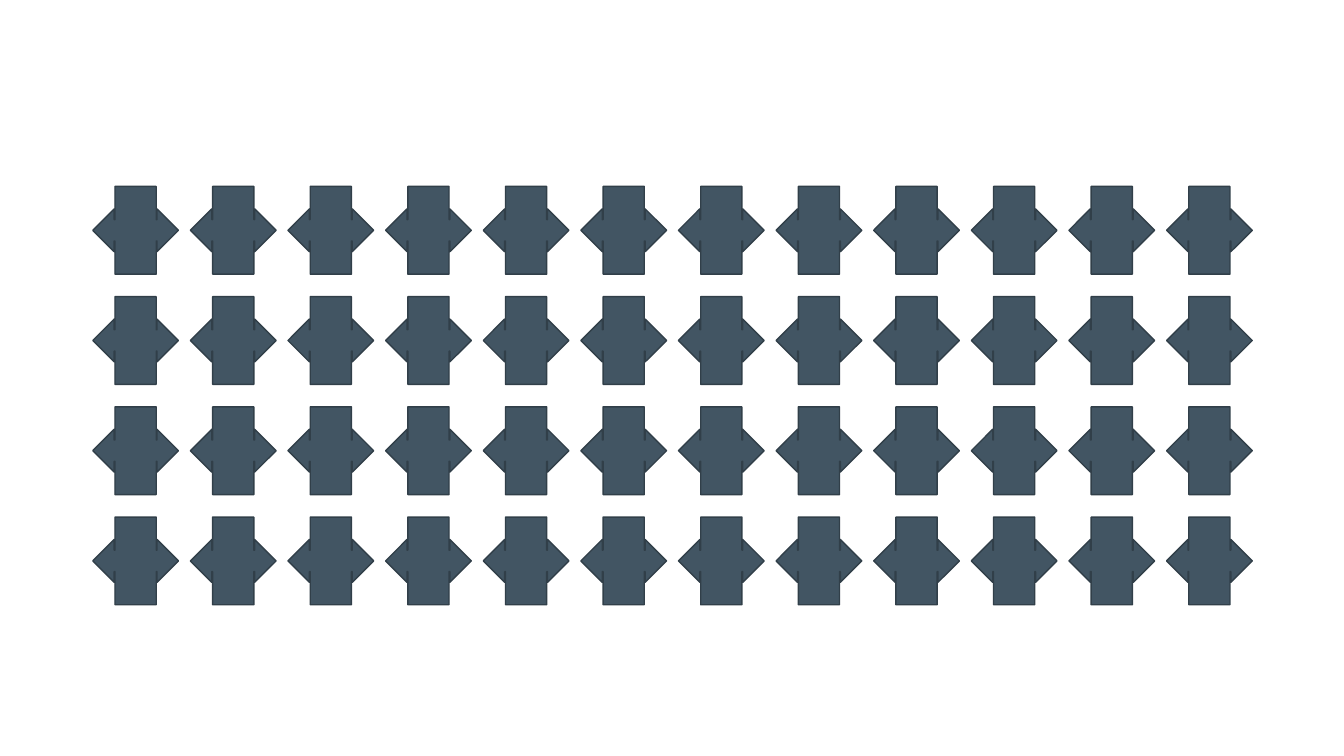
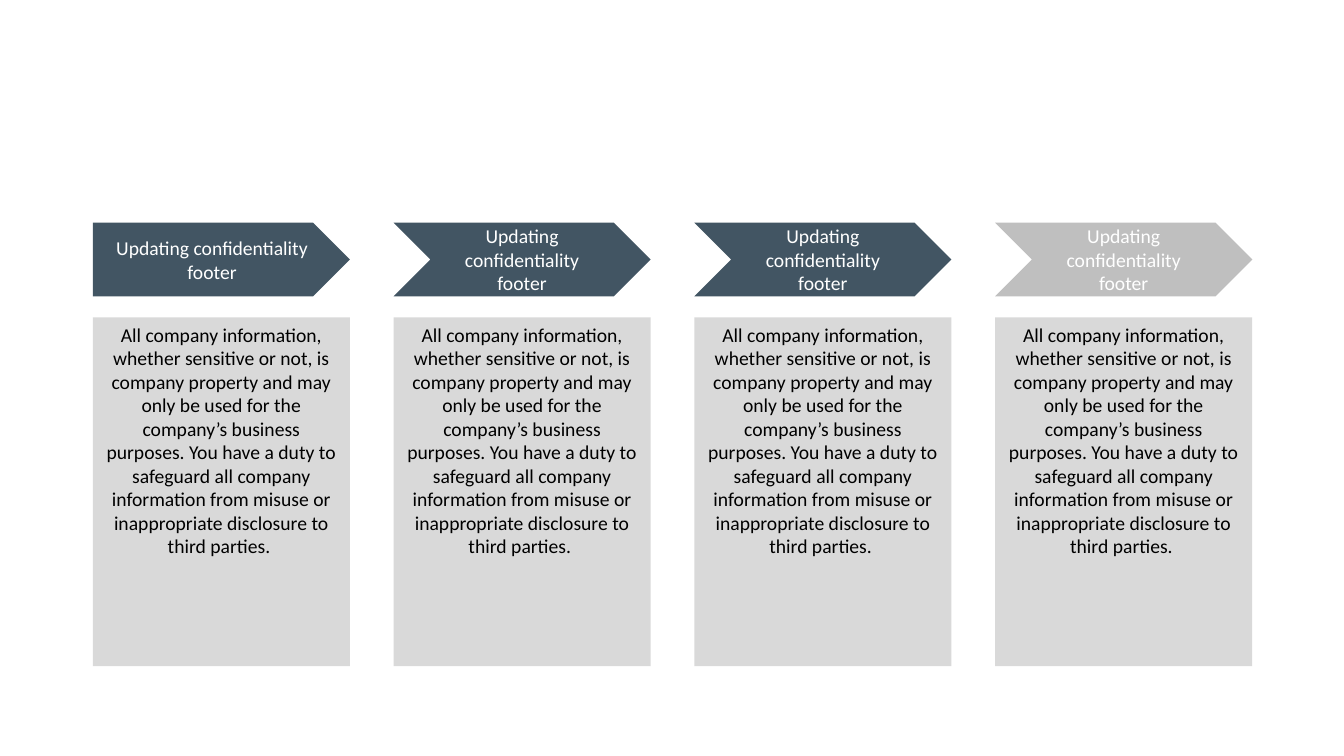
from dataclasses import dataclass

from pptx import Presentation
from pptx.dml.color import RGBColor
from pptx.enum.shapes import MSO_SHAPE as Preset
from pptx.enum.text import MSO_ANCHOR as Anchor, PP_ALIGN as Align
from pptx.shapes.autoshape import Shape
from pptx.shapes.shapetree import GroupShapes
from pptx.util import Inches, Pt

SLATE = RGBColor(0x42, 0x55, 0x63)
SLATE_EDGE = RGBColor(0x31, 0x3F, 0x49)
MUTED = RGBColor(0xBF, 0xBF, 0xBF)
PANEL = RGBColor(0xD9, 0xD9, 0xD9)
WHITE = RGBColor(0xFF, 0xFF, 0xFF)
BLACK = RGBColor(0x00, 0x00, 0x00)

FONT = "Calibri"
TEXT_SIZE = Pt(14)
SLIDE_WIDTH, SLIDE_HEIGHT = 13.33, 7.5
CONTENT_LEFT, CONTENT_WIDTH = 0.92, 11.5

STEP_TITLE = "Updating confidentiality footer"
STEP_DETAIL = (
    "All company information, whether sensitive or not, is company property "
    "and may only be used for the company’s business purposes. You have a duty "
    "to safeguard all company information from misuse or inappropriate "
    "disclosure to third parties. "
)


@dataclass(frozen=True)
class Track:
    """Equal cells along one axis, from start over extent, in inches."""

    start: float
    extent: float
    count: int
    cell: float

    def offset(self, index: int) -> float:
        return self.start + index * (self.extent - self.cell) / (self.count - 1)


@dataclass(frozen=True)
class Box:
    left: float
    top: float
    width: float
    height: float


@dataclass(frozen=True)
class Step:
    outline: Preset
    colour: RGBColor
    title: str = STEP_TITLE
    detail: str = STEP_DETAIL


CALLOUT_COLUMNS = Track(CONTENT_LEFT, CONTENT_WIDTH, 12, 0.85)
CALLOUT_ROWS = Track(1.85, 4.15, 4, 0.87)

STEPS = (
    Step(Preset.PENTAGON, SLATE),
    Step(Preset.CHEVRON, SLATE),
    Step(Preset.CHEVRON, SLATE),
    Step(Preset.CHEVRON, MUTED),
)
STEP_COLUMNS = Track(CONTENT_LEFT, CONTENT_WIDTH, len(STEPS), 2.55)
HEADER_TOP, HEADER_HEIGHT = 2.21, 0.73
DETAIL_TOP, DETAIL_HEIGHT = 3.15, 3.46


def add_block(shapes: GroupShapes, preset: Preset, box: Box, fill: RGBColor) -> Shape:
    """Add a flat preset shape without an outline."""
    block = shapes.add_shape(
        preset, Inches(box.left), Inches(box.top), Inches(box.width), Inches(box.height)
    )
    block.shadow.inherit = False
    block.fill.solid()
    block.fill.fore_color.rgb = fill
    block.line.fill.background()
    return block


def write(block: Shape, text: str, colour: RGBColor, anchor: Anchor) -> None:
    frame = block.text_frame
    frame.word_wrap = True
    frame.vertical_anchor = anchor
    paragraph = frame.paragraphs[0]
    paragraph.text = text
    paragraph.alignment = Align.CENTER
    paragraph.font.name = FONT
    paragraph.font.size = TEXT_SIZE
    paragraph.font.color.rgb = colour


def draw_callout_grid(shapes: GroupShapes) -> None:
    for row in range(CALLOUT_ROWS.count):
        for column in range(CALLOUT_COLUMNS.count):
            box = Box(
                CALLOUT_COLUMNS.offset(column),
                CALLOUT_ROWS.offset(row),
                CALLOUT_COLUMNS.cell,
                CALLOUT_ROWS.cell,
            )
            callout = add_block(shapes, Preset.LEFT_RIGHT_ARROW_CALLOUT, box, SLATE)
            callout.line.color.rgb = SLATE_EDGE
            callout.line.width = Pt(1)


def draw_steps(shapes: GroupShapes) -> None:
    width = STEP_COLUMNS.cell
    for index, step in enumerate(STEPS):
        left = STEP_COLUMNS.offset(index)
        header_box = Box(left, HEADER_TOP, width, HEADER_HEIGHT)
        detail_box = Box(left, DETAIL_TOP, width, DETAIL_HEIGHT)
        header = add_block(shapes, step.outline, header_box, step.colour)
        write(header, step.title, WHITE, Anchor.MIDDLE)
        detail = add_block(shapes, Preset.RECTANGLE, detail_box, PANEL)
        write(detail, step.detail, BLACK, Anchor.TOP)


def main() -> None:
    deck = Presentation()
    deck.slide_width, deck.slide_height = Inches(SLIDE_WIDTH), Inches(SLIDE_HEIGHT)
    blank = deck.slide_layouts[6]
    for draw in (draw_callout_grid, draw_steps):
        slide = deck.slides.add_slide(blank)
        draw(slide.shapes.add_group_shape().shapes)
    deck.save("out.pptx")


if __name__ == "__main__":
    main()
